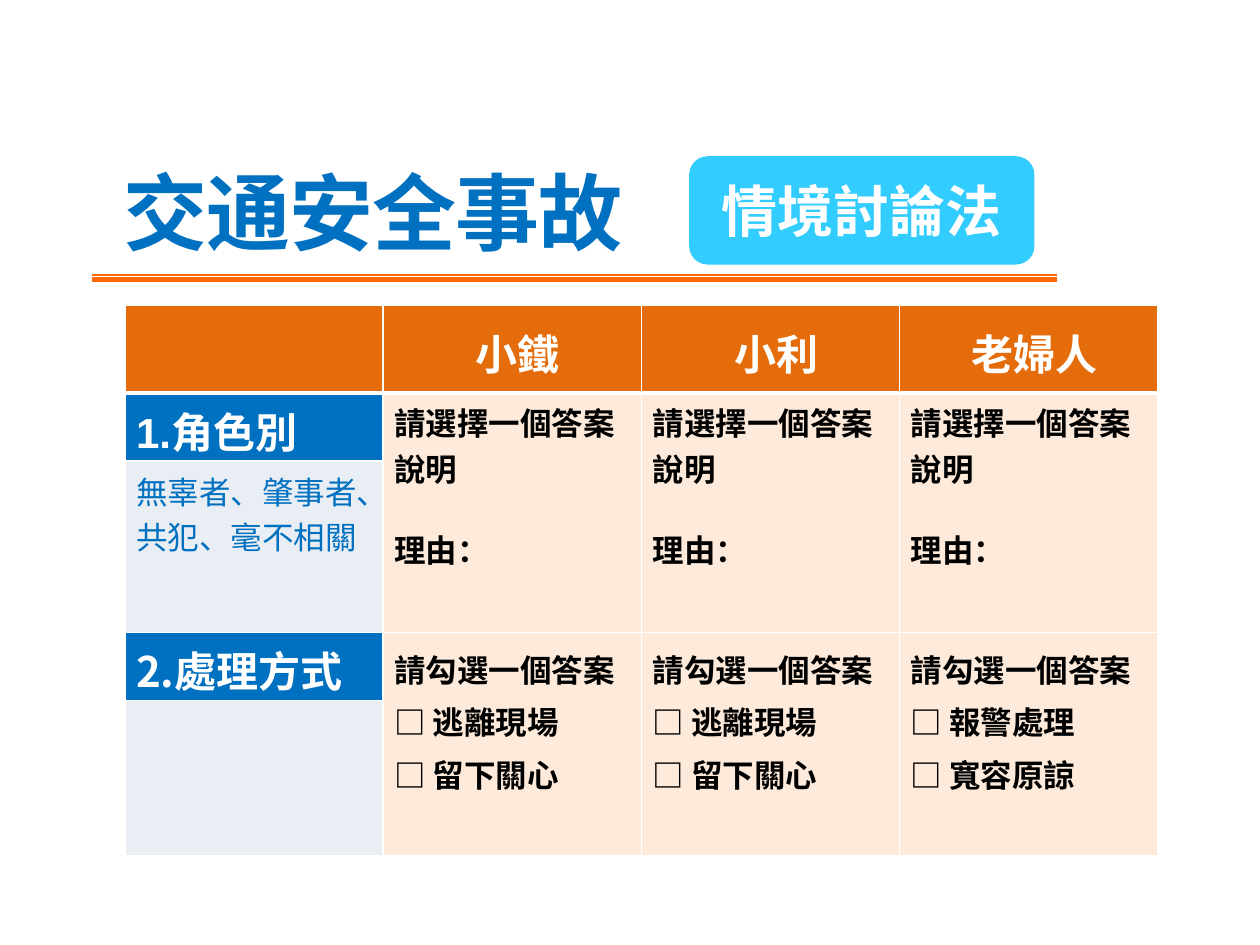
import pptx
import pptx.util
import pptx.dml.color
import pptx.enum.text
import pptx.enum.shapes
import pptx.oxml
import pptx.oxml.ns

Inches = pptx.util.Inches
Pt = pptx.util.Pt
PP_ALIGN = pptx.enum.text.PP_ALIGN
MSO_ANCHOR = pptx.enum.text.MSO_ANCHOR
NSDECL = pptx.oxml.ns.nsdecls("a")

COLORS = {
    "blue": "0070C0", "sky": "33CCFF", "rule": "FF6903", "orange": "E46C0A",
    "peach": "FDEADA", "pale": "E9EDF4", "white": "FFFFFF", "black": "000000",
}
CJK = "Noto Sans CJK SC"
TITLE = {"name": CJK, "size": Pt(48), "bold": True, "color": "blue"}
BADGE = {"name": CJK, "size": Pt(32), "bold": True, "color": "white"}
HEAD = {"name": CJK, "size": Pt(24), "bold": True, "color": "white"}
LABEL = {**HEAD, "name": "Arial"}
BODY = {"name": "Times New Roman", "size": Pt(18), "bold": True, "color": "black"}
NOTE = {"name": CJK, "size": Pt(18), "bold": False, "color": "blue"}


def rgb(key):
    return pptx.dml.color.RGBColor.from_string(COLORS[key])


class SlideBuilder:
    def __init__(self, prs):
        self.s = prs.slides.add_slide(prs.slide_layouts[5])

    def add_lines(self, tf, lines, style, para=None, gap=None, spacing=None):
        for i, text in enumerate(lines):
            p = tf.paragraphs[0] if i == 0 else tf.add_paragraph()
            for name, value in (para or {}).items():
                setattr(p, name, value)
            if i and gap:
                p.space_before = gap
            r = p.add_run()
            r.text = text
            for name, value in style.items():
                if name == "color":
                    r.font.color.rgb = rgb(value)
                else:
                    setattr(r.font, name, value)
            rPr = r._r.get_or_add_rPr()
            rPr.find(pptx.oxml.ns.qn("a:latin")).addnext(
                pptx.oxml.parse_xml(f'<a:ea {NSDECL} typeface="{CJK}"/>'))
            if spacing is not None:
                rPr.set("spc", str(spacing))

    def frame(self, tf, anchor):
        fmt = {"margin_left": 0, "margin_top": 0, "margin_right": 0, "margin_bottom": 0,
               "word_wrap": False, "vertical_anchor": anchor,
               "auto_size": pptx.enum.text.MSO_AUTO_SIZE.NONE}
        for name, value in fmt.items():
            setattr(tf, name, value)

    def title(self, text, box):
        sp = self.s.shapes.title
        sp.left, sp.top, sp.width, sp.height = map(Inches, box)
        self.frame(sp.text_frame, MSO_ANCHOR.MIDDLE)
        self.add_lines(sp.text_frame, [text], TITLE, {"alignment": PP_ALIGN.LEFT}, spacing=-50)

    def badge(self, text, box):
        sp = self.s.shapes.add_shape(
            pptx.enum.shapes.MSO_SHAPE.ROUNDED_RECTANGLE, *map(Inches, box))
        sp.adjustments[0] = 0.17
        sp.shadow.inherit = False
        sp.fill.solid()
        sp.fill.fore_color.rgb = rgb("sky")
        sp.line.fill.background()
        self.frame(sp.text_frame, MSO_ANCHOR.MIDDLE)
        self.add_lines(sp.text_frame, [text], BADGE, {"alignment": PP_ALIGN.CENTER})

    def rule(self, x1, x2, y, weight):
        cxn = self.s.shapes.add_connector(
            pptx.enum.shapes.MSO_CONNECTOR.STRAIGHT, *map(Inches, (x1, y, x2, y)))
        cxn.line.color.rgb = rgb("rule")
        cxn.line.width = Pt(weight)
        cxn._element.spPr.append(pptx.oxml.parse_xml(f"<a:effectLst {NSDECL}/>"))

    def table(self, left, top, col_width, cols, heights):
        shape = self.s.shapes.add_table(
            len(heights), cols, Inches(left), Inches(top),
            Inches(col_width * cols), Inches(sum(heights)))
        tbl = shape.table
        for col in tbl.columns:
            col.width = Inches(col_width)
        for row, height in zip(tbl.rows, heights):
            row.height = Inches(height)
        return tbl

    def cell(self, cell, fill, lines=(), style=None, thick=None,
             anchor=MSO_ANCHOR.TOP, para=None, gap=None):
        fmt = {"margin_left": Inches(0.09), "margin_right": 0, "margin_top": Inches(0.05),
               "margin_bottom": 0, "vertical_anchor": anchor}
        for name, value in fmt.items():
            setattr(cell, name, value)
        cell.fill.solid()
        cell.fill.fore_color.rgb = rgb(fill)
        tcPr = cell._tc.get_or_add_tcPr()
        for i, side in enumerate("LRTB"):
            width = Pt(3 if side == thick else 1)
            tcPr.insert(i, pptx.oxml.parse_xml(
                f'<a:ln{side} {NSDECL} w="{width}"><a:solidFill>'
                f'<a:srgbClr val="{COLORS["white"]}"/></a:solidFill></a:ln{side}>'))
        self.add_lines(cell.text_frame, lines, style, para, gap)


def main():
    prs = pptx.Presentation()
    prs.slide_width, prs.slide_height = Inches(10), Inches(7.5)
    b = SlideBuilder(prs)
    b.title("交通安全事故", (0.98, 1.27, 4.03, 0.81))
    b.badge("情境討論法", (5.47, 1.24, 2.74, 0.86))
    for y, weight in ((2.18, 1.1), (2.22, 3.1)):
        b.rule(0.73, 8.39, y, weight)

    people = {
        "小鐵": ("逃離現場", "留下關心"),
        "小利": ("逃離現場", "留下關心"),
        "老婦人": ("報警處理", "寬容原諒"),
    }
    tbl = b.table(0.99, 2.42, 2.05, len(people) + 1, (0.7, 0.54, 1.36, 0.54, 1.23))
    middle = MSO_ANCHOR.MIDDLE
    b.cell(tbl.cell(0, 0), "orange", thick="B")
    b.cell(tbl.cell(1, 0), "blue", ["1.角色別"], LABEL, thick="T", anchor=middle)
    b.cell(tbl.cell(2, 0), "pale", ["無辜者、肇事者、共犯、毫不相關"], NOTE)
    b.cell(tbl.cell(3, 0), "blue", ["2.處理方式"], HEAD)
    b.cell(tbl.cell(4, 0), "pale")

    for c, (person, choices) in enumerate(people.items(), 1):
        b.cell(tbl.cell(0, c), "orange", [person], HEAD, thick="B", anchor=middle,
               para={"alignment": PP_ALIGN.CENTER})
        for row in (1, 3):
            tbl.cell(row, c).merge(tbl.cell(row + 1, c))
        b.cell(tbl.cell(1, c), "peach", ["請選擇一個答案說明", "理由："], BODY,
               thick="T", gap=Pt(20))
        b.cell(tbl.cell(3, c), "peach",
               ["請勾選一個答案"] + [f"□ {choice}" for choice in choices], BODY,
               para={"line_spacing": Pt(30)})
    prs.save("out.pptx")


if __name__ == "__main__":
    main()
